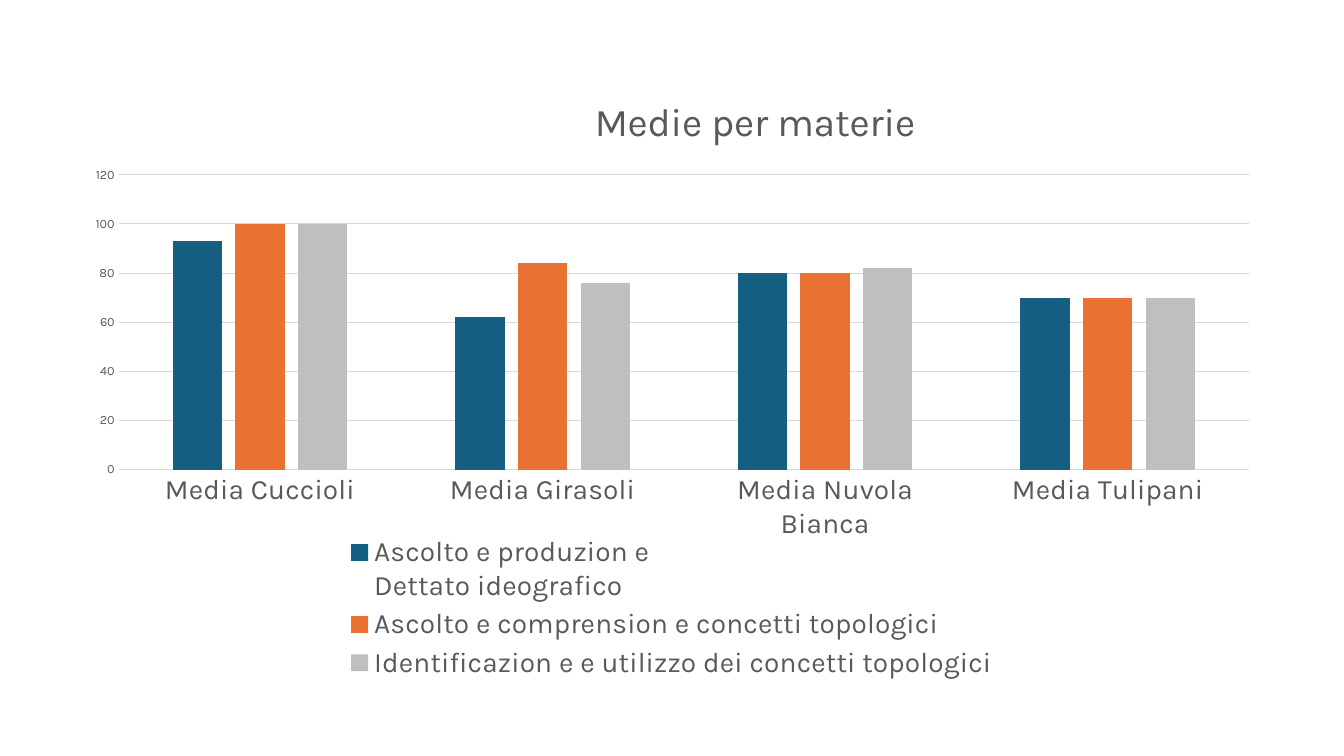
"""Build a slide with a clustered column chart of average scores per subject."""
from dataclasses import dataclass

from lxml import etree
from pptx import Presentation
from pptx.chart.chart import Chart
from pptx.chart.data import CategoryChartData
from pptx.dml.color import RGBColor
from pptx.dml.fill import FillFormat
from pptx.dml.line import LineFormat
from pptx.enum.chart import XL_CHART_TYPE, XL_LEGEND_POSITION, XL_TICK_MARK
from pptx.oxml.ns import qn
from pptx.text.text import Font
from pptx.util import Pt

CLUSTERED = XL_CHART_TYPE.COLUMN_CLUSTERED
BOTTOM = XL_LEGEND_POSITION.BOTTOM
NO_TICK = XL_TICK_MARK.NONE
FONT_NAME = "Karla"
TEXT_COLOR = "595959"
LINE_COLOR = "D9D9D9"


@dataclass(frozen=True)
class Subject:
    """A chart series with one average per class."""

    name: str
    averages: tuple[int, ...]
    color: str


@dataclass(frozen=True)
class Area:
    """A region of the chart in fractions of its size."""

    left: float
    top: float
    width: float = 0
    height: float = 0


CLASSES = ("Media Cuccioli", "Media Girasoli", "Media Nuvola Bianca", "Media Tulipani")
SUBJECTS = (
    Subject("Ascolto e produzion e\nDettato ideograﬁco", (93, 62, 80, 70), "156082"),
    Subject("Ascolto e comprension e concetti topologici", (100, 84, 80, 70), "E97132"),
    Subject("Identiﬁcazion e e utilizzo dei concetti topologici", (100, 76, 82, 70), "BFBFBF"),
)
TITLE_AREA = Area(0.43, 0.03)
PLOT_AREA = Area(0.04, 0.17, 0.94, 0.48)
LEGEND_AREA = Area(0.23, 0.75, 0.54, 0.25)


def paint(fill: FillFormat, color: str) -> None:
    """Give a fill one solid colour."""
    fill.solid()
    fill.fore_color.rgb = RGBColor.from_string(color)


def style_font(font: Font, size: float, color: str = TEXT_COLOR) -> None:
    """Set the family, size and colour of a font."""
    font.name = FONT_NAME
    font.size = Pt(size)
    font.bold = False
    paint(font.fill, color)


def style_line(line: LineFormat) -> None:
    """Draw a thin grey line."""
    line.width = Pt(0.75)
    paint(line.fill, LINE_COLOR)


def place(chart: Chart, part: str, follower: str, area: Area) -> None:
    """Fix the position of a chart part, writing its layout before the follower."""
    element = chart.element.find(f".//{qn(part)}")
    for old_layout in element.findall(qn("c:layout")):
        element.remove(old_layout)
    layout = etree.Element(qn("c:layout"))
    element.find(qn(follower)).addprevious(layout)
    manual = etree.SubElement(layout, qn("c:manualLayout"))
    settings = {"xMode": "edge", "yMode": "edge", "x": area.left, "y": area.top}
    if area.width:
        settings |= {"w": area.width, "h": area.height}
    if part == "c:plotArea":
        settings = {"layoutTarget": "inner"} | settings
    for name, value in settings.items():
        etree.SubElement(manual, qn(f"c:{name}"), val=str(value))


def style_title(chart: Chart) -> None:
    """Write the chart title."""
    chart.has_title = True
    text_frame = chart.chart_title.text_frame
    text_frame.text = "Medie per materie"
    style_font(text_frame.paragraphs[0].runs[0].font, 28)
    place(chart, "c:title", "c:overlay", TITLE_AREA)


def style_axes(chart: Chart) -> None:
    """Format both axes and the gridlines."""
    for axis, size in ((chart.category_axis, 20), (chart.value_axis, 9)):
        axis.major_tick_mark = axis.minor_tick_mark = NO_TICK
        style_font(axis.tick_labels.font, size)
    style_line(chart.category_axis.format.line)
    value_axis = chart.value_axis
    value_axis.minimum_scale, value_axis.maximum_scale = 0, 120
    value_axis.major_unit = 20
    value_axis.format.line.fill.background()
    value_axis.tick_labels.number_format = "0"
    value_axis.tick_labels.number_format_is_linked = False
    style_line(value_axis.major_gridlines.format.line)


def style_columns(chart: Chart) -> None:
    """Space and colour the columns."""
    plot = chart.plots[0]
    plot.gap_width, plot.overlap = 219, -27
    plot.vary_by_categories = False
    for series, subject in zip(plot.series, SUBJECTS):
        paint(series.format.fill, subject.color)
    place(chart, "c:plotArea", "c:barChart", PLOT_AREA)


def style_legend(chart: Chart) -> None:
    """Show the legend below the columns."""
    chart.has_legend = True
    chart.legend.position = BOTTOM
    chart.legend.include_in_layout = False
    style_font(chart.legend.font, 20)
    place(chart, "c:legend", "c:overlay", LEGEND_AREA)


def main() -> None:
    """Create and save the presentation."""
    presentation = Presentation()
    presentation.slide_width, presentation.slide_height = Pt(960), Pt(540)
    slide = presentation.slides.add_slide(presentation.slide_layouts[6])
    chart_data = CategoryChartData(number_format="0")
    chart_data.categories = CLASSES
    for subject in SUBJECTS:
        chart_data.add_series(subject.name, subject.averages)
    frame = slide.shapes.add_chart(
        CLUSTERED, Pt(50.4), Pt(50.4), Pt(859), Pt(438.5), chart_data
    )
    chart = frame.chart
    style_font(chart.font, 10, "000000")
    style_title(chart)
    style_axes(chart)
    style_columns(chart)
    style_legend(chart)
    presentation.save("out.pptx")


if __name__ == "__main__":
    main()
